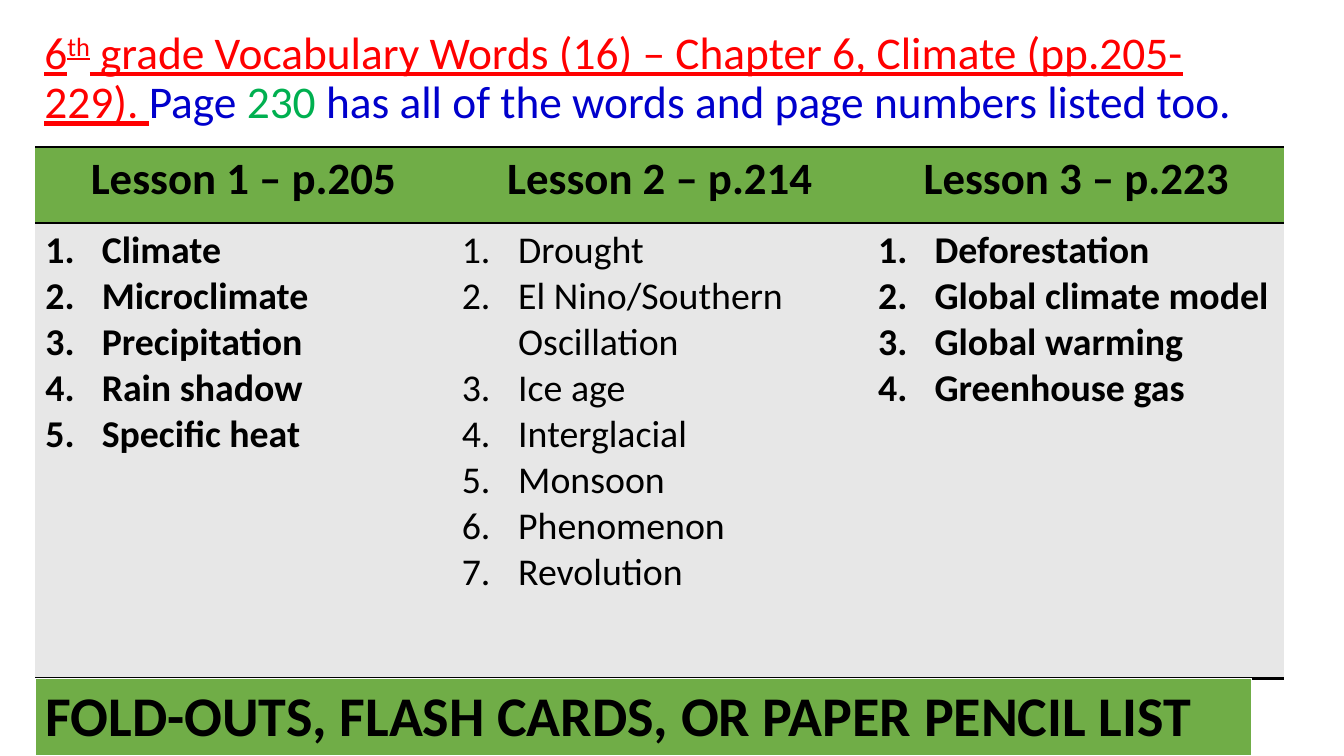
from lxml.etree import SubElement
from pptx import Presentation
from pptx.dml.color import RGBColor
from pptx.enum.text import MSO_ANCHOR, MSO_AUTO_SIZE, PP_ALIGN
from pptx.oxml.ns import qn
from pptx.util import Inches, Pt

RED = RGBColor(0xFF, 0x00, 0x00)
BLUE = RGBColor(0x00, 0x00, 0xCC)
EMERALD = RGBColor(0x00, 0xB0, 0x50)
GREEN = RGBColor(0x70, 0xAD, 0x47)
GRAY = RGBColor(0xE7, 0xE7, 0xE7)
BLACK = RGBColor(0x00, 0x00, 0x00)
WHITE = RGBColor(0xFF, 0xFF, 0xFF)

LEFT = Inches(0.35)
TABLE_TOP, BANNER_TOP = Inches(1.46), Inches(6.73)
COLUMN, HEADER = Inches(4.13), Inches(0.75)

LESSONS = [
    ("Lesson 1 – p.205", True,
     ["Climate", "Microclimate", "Precipitation", "Rain shadow", "Specific heat"]),
    ("Lesson 2 – p.214", False,
     ["Drought", "El Nino/Southern Oscillation", "Ice age", "Interglacial",
      "Monsoon", "Phenomenon", "Revolution"]),
    ("Lesson 3 – p.223", True,
     ["Deforestation", "Global climate model", "Global warming", "Greenhouse gas"]),
]


def add_span(para, text, color, **formats):
    span = para.add_run()
    span.text = text
    span.font.color.rgb = color
    for name, value in {"name": "Calibri", **formats}.items():
        setattr(span.font, name, value)
    return span


def style_cell(cell, fill, borders):
    """Draw the given borders, clear the other sides, then fill the cell."""
    properties = cell._tc.get_or_add_tcPr()
    for side in ("lnL", "lnR", "lnT", "lnB"):
        line = SubElement(properties, qn(f"a:{side}"))
        if side in borders:
            color, width = borders[side]
            line.set("w", str(Pt(width)))
            solid = SubElement(line, qn("a:solidFill"))
            SubElement(solid, qn("a:srgbClr")).set("val", str(color))
        else:
            SubElement(line, qn("a:noFill"))
    cell.fill.solid()
    cell.fill.fore_color.rgb = fill


deck = Presentation()
deck.slide_width, deck.slide_height = Inches(13.33), Inches(7.5)
page = deck.slides.add_slide(deck.slide_layouts[5])

# Title
title = page.shapes.title
title.left, title.top = Inches(0.34), Inches(0.14)
title.width, title.height = Inches(12.08), Inches(1.3)
frame = title.text_frame
for name, value in {"word_wrap": True, "auto_size": MSO_AUTO_SIZE.NONE,
                    "vertical_anchor": MSO_ANCHOR.MIDDLE}.items():
    setattr(frame, name, value)
para = frame.paragraphs[0]
para.alignment = PP_ALIGN.LEFT
para.line_spacing = 0.9
for text, color, underline, raised in [
    ("6", RED, True, False),
    ("th", RED, True, True),
    (" grade Vocabulary Words (16) – Chapter 6, Climate (pp.205-229). ", RED, True, False),
    ("Page ", BLUE, False, False),
    ("230 ", EMERALD, False, False),
    ("has all of the words and page numbers listed too.", BLUE, False, False),
]:
    span = add_span(para, text, color, size=Pt(32.4), underline=underline)
    if raised:
        span.font._element.set("baseline", "30000")

# Vocabulary table: one column per lesson
words_table = page.shapes.add_table(
    2, len(LESSONS), LEFT, TABLE_TOP, COLUMN * len(LESSONS), BANNER_TOP - TABLE_TOP).table
words_table.rows[0].height = HEADER
words_table.rows[1].height = BANNER_TOP - TABLE_TOP - HEADER
rule = (BLACK, 2)
for column, (heading, bold, words) in enumerate(LESSONS):
    head, body = words_table.cell(0, column), words_table.cell(1, column)
    style_cell(head, GREEN, {"lnT": rule, "lnB": rule})
    style_cell(body, GRAY, {"lnT": rule, "lnB": rule})

    para = head.text_frame.paragraphs[0]
    para.alignment = PP_ALIGN.CENTER
    add_span(para, heading, BLACK, size=Pt(32), bold=True)

    for index, word in enumerate(words):
        para = body.text_frame.add_paragraph() if index else body.text_frame.paragraphs[0]
        add_span(para, word, BLACK, size=Pt(27), bold=bold)
        layout = para._p.get_or_add_pPr()
        layout.set("marL", str(Inches(0.56)))
        layout.set("indent", str(-Inches(0.56)))
        SubElement(layout, qn("a:buFont")).set("typeface", "+mj-lt")
        SubElement(layout, qn("a:buAutoNum")).set("type", "arabicPeriod")

# Banner table along the bottom edge
banner = page.shapes.add_table(
    1, 1, LEFT, BANNER_TOP, Inches(12.06), deck.slide_height - BANNER_TOP).table.cell(0, 0)
thin = (WHITE, 1)
style_cell(banner, GREEN, {"lnL": thin, "lnR": thin, "lnT": thin, "lnB": (WHITE, 3)})
add_span(banner.text_frame.paragraphs[0], "FOLD-OUTS, FLASH CARDS, OR PAPER PENCIL LIST",
         BLACK, size=Pt(40), bold=True)

deck.save("out.pptx")
